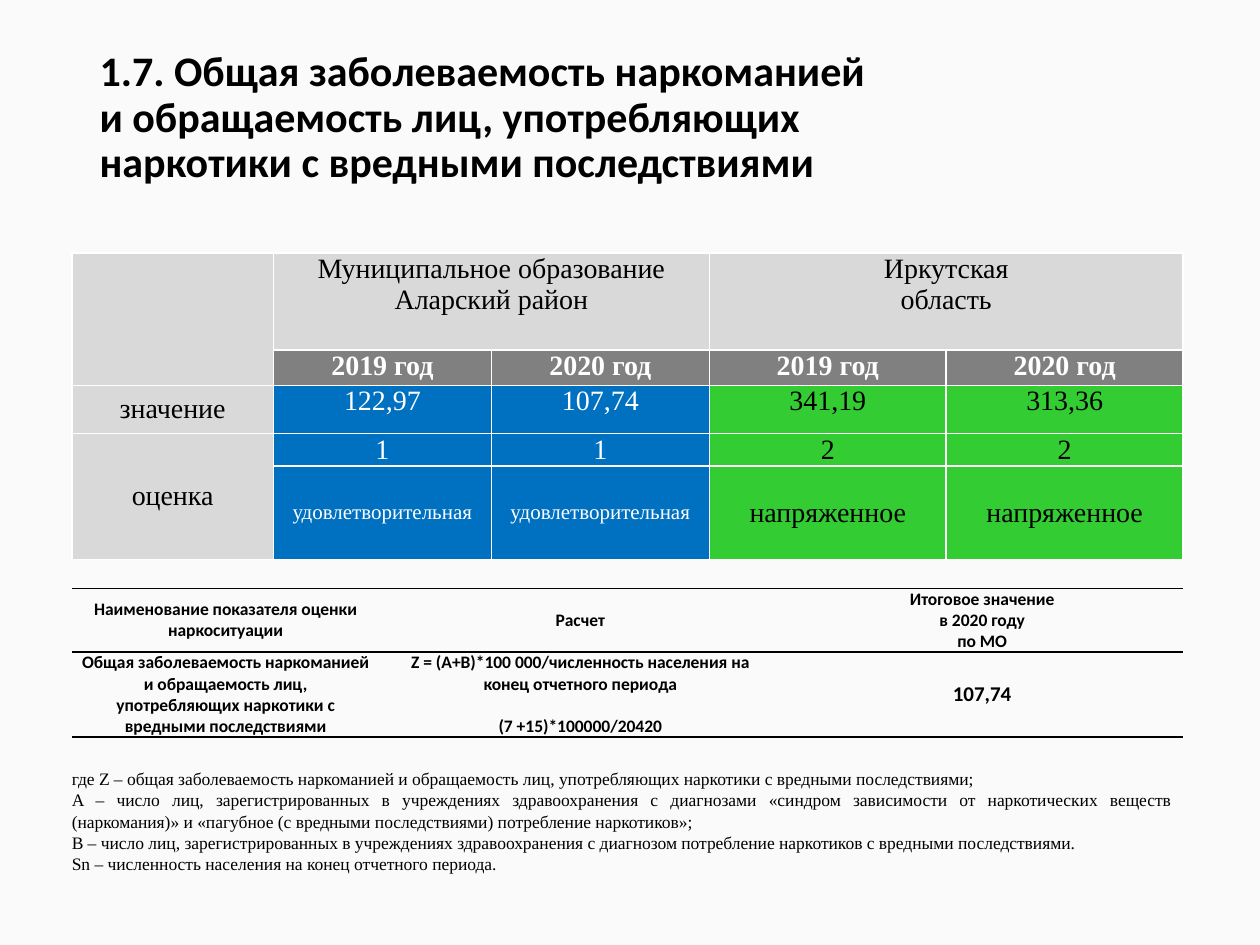
"""Build the slide on drug addiction incidence with two tables and a legend."""
from lxml import etree
from pptx import Presentation
from pptx.dml.color import RGBColor
from pptx.enum.text import MSO_ANCHOR, MSO_AUTO_SIZE, PP_ALIGN
from pptx.oxml.ns import qn
from pptx.util import Inches, Pt

TOP, MIDDLE = MSO_ANCHOR.TOP, MSO_ANCHOR.MIDDLE
LEFT, CENTER, JUSTIFY = PP_ALIGN.LEFT, PP_ALIGN.CENTER, PP_ALIGN.JUSTIFY
NO_FIT = MSO_AUTO_SIZE.NONE
SANS, SERIF = "Calibri", "Times New Roman"
COLORS = {"bg": "FAFAFA", "black": "000000", "white": "FFFFFF", "label": "D9D9D9",
          "year": "808080", "district": "0070C0", "region": "33CC33"}

TITLE = ("1.7. Общая заболеваемость наркоманией\vи обращаемость лиц, употребляющих\v"
         "наркотики с вредными последствиями")
RATING = [
    ["", "Муниципальное образование Аларский район", "", "Иркутская\nобласть", ""],
    ["", "2019 год", "2020 год", "2019 год", "2020 год"],
    ["значение", "122,97", "107,74", "341,19", "313,36"],
    ["оценка", "1", "1", "2", "2"],
    ["", "удовлетворительная", "удовлетворительная", "напряженное", "напряженное"],
]
RATING_COLS = [1.6, 1.73, 1.73, 1.88, 1.88]
RATING_ROWS = [0.77, 0.28, 0.38, 0.26, 0.74]
MERGES = [((0, 0), (1, 0)), ((0, 1), (0, 2)), ((0, 3), (0, 4)), ((3, 0), (4, 0))]
CALC = [
    ["Наименование показателя оценки наркоситуации", "Расчет",
     "Итоговое значение\nв 2020 году\nпо МО"],
    ["Общая заболеваемость наркоманией и обращаемость лиц, употребляющих наркотики "
     "с вредными последствиями",
     "Z = (A+B)*100 000/численность населения на конец отчетного периода\n"
     "(7 +15)*100000/20420",
     "107,74"],
]
CALC_COLS = [2.44, 3.19, 3.19]
CALC_ROWS = [0.5, 0.67]
LEGEND = "\n".join([
    "где Z – общая заболеваемость наркоманией и обращаемость лиц, употребляющих "
    "наркотики с вредными последствиями;",
    "A – число лиц, зарегистрированных в учреждениях здравоохранения с диагнозами "
    "«синдром зависимости от наркотических веществ (наркомания)» и «пагубное "
    "(с вредными последствиями) потребление наркотиков»;",
    "B – число лиц, зарегистрированных в учреждениях здравоохранения с диагнозом "
    "потребление наркотиков с вредными последствиями.",
    "Sn – численность населения на конец отчетного периода.",
])


def write(tf, text, font=SANS, size=10, color="black", bold=False, align=CENTER, spacing=None):
    for i, line in enumerate(text.split("\n")):
        p = tf.paragraphs[0] if i == 0 else tf.add_paragraph()
        p.text = line
        p.alignment = align
        p.line_spacing = spacing
        for f in [p.font] + [r.font for r in p.runs]:
            f.name, f.size, f.bold = font, Pt(size), bold
            f.color.rgb = RGBColor.from_string(COLORS[color])


def add_table(s, top, cols, rows):
    tbl = s.shapes.add_table(len(rows), len(cols), Inches(0.57), Inches(top),
                             Inches(sum(cols)), Inches(sum(rows))).table
    tbl.first_row = tbl.horz_banding = False
    for col, width in zip(tbl.columns, cols):
        col.width = Inches(width)
    for row, height in zip(tbl.rows, rows):
        row.height = Inches(height)
    return tbl


def style_cell(cell, borders, fill=None, margin=0.06, anchor=MIDDLE):
    cell.margin_left = cell.margin_right = Inches(margin)
    cell.margin_top = cell.margin_bottom = 0
    cell.vertical_anchor = anchor
    tcPr = cell._tc.get_or_add_tcPr()
    for side in "LRTB":
        ln = etree.SubElement(tcPr, qn("a:ln" + side), w=str(Pt(1)))
        if side in borders:
            paint = etree.SubElement(ln, qn("a:solidFill"))
            etree.SubElement(paint, qn("a:srgbClr"), val=COLORS[borders[side]])
        else:
            etree.SubElement(ln, qn("a:noFill"))
    if fill:
        cell.fill.solid()
        cell.fill.fore_color.rgb = RGBColor.from_string(COLORS[fill])
    else:
        cell.fill.background()


def add_rating(s):
    tbl = add_table(s, 2.01, RATING_COLS, RATING_ROWS)
    for i, row in enumerate(RATING):
        for j, text in enumerate(row):
            if i == 0 or j == 0:
                fill = "label"
            elif i == 1:
                fill = "year"
            else:
                fill = "district" if j < 3 else "region"
            color = "white" if fill in ("year", "district") else "black"
            anchor = MIDDLE if i > 2 or (i == 2 and j == 0) else TOP
            cell = tbl.cell(i, j)
            style_cell(cell, dict.fromkeys("LRTB", "white"), fill, anchor=anchor)
            write(cell.text_frame, text, font=SERIF, color=color, bold=fill == "year",
                  size=12 if i == 4 and fill == "district" else 16)
    for start, end in MERGES:
        tbl.cell(*start).merge(tbl.cell(*end))


def add_calc(s):
    tbl = add_table(s, 4.67, CALC_COLS, CALC_ROWS)
    for i, row in enumerate(CALC):
        for j, text in enumerate(row):
            cell = tbl.cell(i, j)
            style_cell(cell, {"T": "black", "B": "black"}, margin=0.07)
            write(cell.text_frame, text, bold=True, size=12 if (i, j) == (1, 2) else 10)
    tbl.cell(1, 1).text_frame.paragraphs[1].space_before = Pt(12)


def main():
    prs = Presentation()
    prs.slide_width, prs.slide_height = Inches(10), Inches(7.5)
    s = prs.slides.add_slide(prs.slide_layouts[5])
    s.background.fill.solid()
    s.background.fill.fore_color.rgb = RGBColor.from_string(COLORS["bg"])

    sp = s.shapes.title
    sp.left, sp.top, sp.width, sp.height = map(Inches, (0.69, 0.4, 8.62, 1.45))
    tf = sp.text_frame
    tf.auto_size, tf.vertical_anchor, tf.margin_top = NO_FIT, TOP, 0
    write(tf, TITLE, size=24, bold=True, align=LEFT, spacing=0.9)

    add_rating(s)
    add_calc(s)

    tf = s.shapes.add_textbox(*map(Inches, (0.22, 6.05, 9.17, 0.94))).text_frame
    tf.word_wrap = True
    tf.margin_left = Inches(0.35)
    write(tf, LEGEND, font=SERIF, align=JUSTIFY)
    prs.save("out.pptx")


if __name__ == "__main__":
    main()
